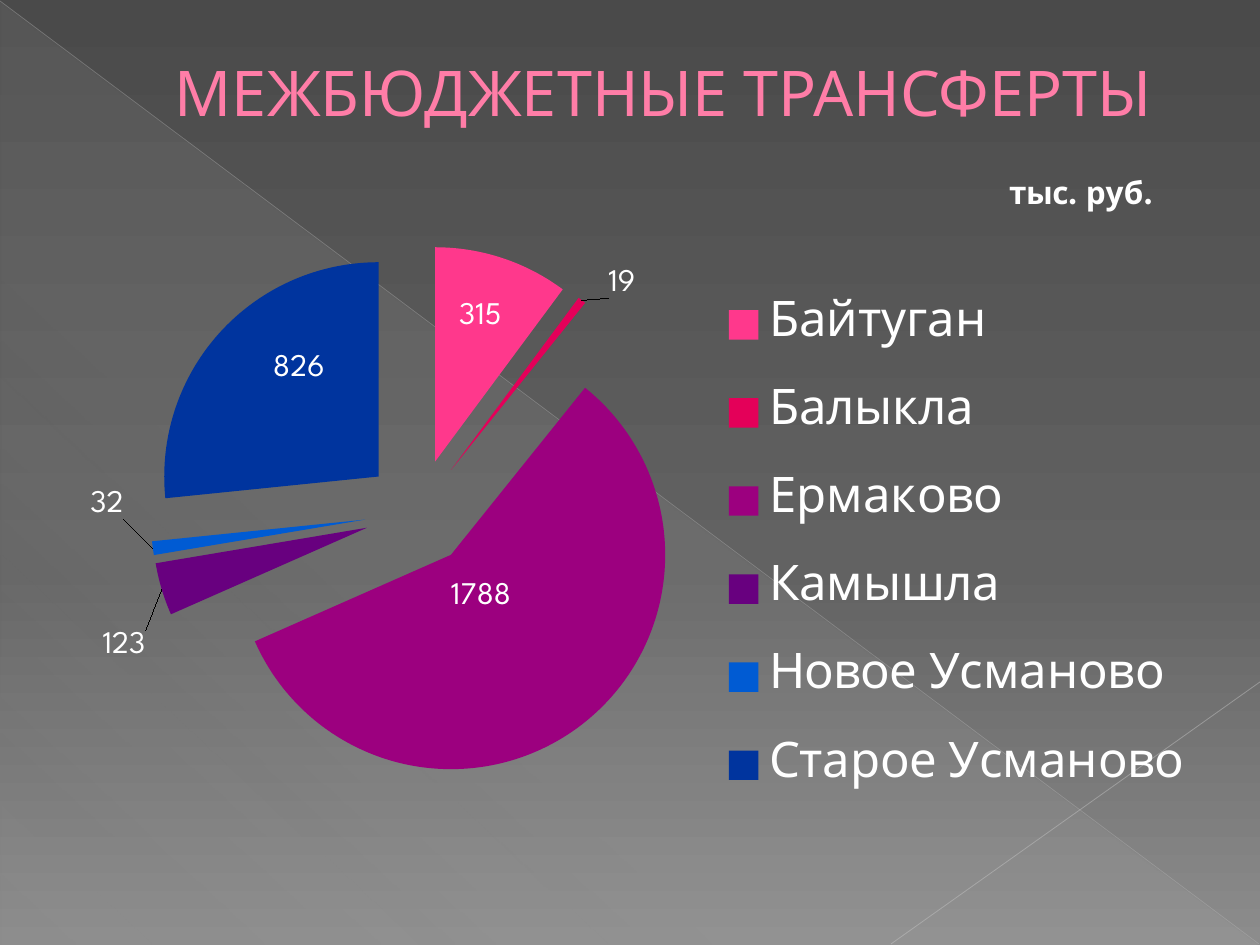
from lxml import etree
from pptx import Presentation
from pptx.chart.data import CategoryChartData
from pptx.dml.color import RGBColor
from pptx.enum.chart import XL_CHART_TYPE, XL_LABEL_POSITION, XL_LEGEND_POSITION
from pptx.enum.shapes import MSO_CONNECTOR, MSO_SHAPE
from pptx.enum.text import MSO_ANCHOR, PP_ALIGN
from pptx.oxml.ns import qn
from pptx.util import Emu, Pt

PIE = XL_CHART_TYPE.PIE
CENTER_LABEL = XL_LABEL_POSITION.CENTER
RIGHT = XL_LEGEND_POSITION.RIGHT
STRAIGHT = MSO_CONNECTOR.STRAIGHT
TRIANGLE = MSO_SHAPE.RIGHT_TRIANGLE
MIDDLE = MSO_ANCHOR.MIDDLE
CENTER = PP_ALIGN.CENTER

FONT = "League Spartan"
TITLE = "МЕЖБЮДЖЕТНЫЕ ТРАНСФЕРТЫ"
UNIT = "тыс. руб."
COLORS = {"title": "FF7DA7", "outline": "B12761", "text": "FFFFFF", "leader": "000000"}
BACKGROUND = [(0, "4A4A4A", 100), (60, "626262", 100), (100, "8C8C8C", 100)]
SHEEN = [(0, "D2D2D2", 10), (70, "D2D2D2", 8), (100, "D2D2D2", 1)]
RULES = [
    ((0, 1, 1259, 944), "BFBFBF", 0.39, 35),
    ((1260, 682, 891, 944), "C6C6C6", 0.47, 45),
]
TRANSFERS = [
    ("Байтуган", 315, "FF388C", (0.01, -0.06)),
    ("Балыкла", 19, "E40059", (0.09, -0.14)),
    ("Ермаково", 1788, "9C007F", (-0.03, -0.06)),
    ("Камышла", 123, "68007F", (-0.12, 0.12)),
    ("Новое Усманово", 32, "005BD3", (-0.13, -0.04)),
    ("Старое Усманово", 826, "00349E", (0, -0.05)),
]
SCALE = 914400 // 126


def px(*lengths):
    return [Emu(length * SCALE) for length in lengths]


def rgb(value):
    return RGBColor.from_string(value)


def add(parent, tag, **attributes):
    child = etree.SubElement(parent, qn(tag))
    for name, value in attributes.items():
        child.set(name, str(value))
    return child


def add_color(parent, color, opacity=100):
    node = add(parent, "a:srgbClr", val=color)
    if opacity < 100:
        add(node, "a:alpha", val=opacity * 1000)


def set_gradient(fill, owner, stops, angle):
    fill.gradient()
    fill.gradient_angle = 360 - angle
    stop_list = next(owner.iter(qn("a:gsLst")))
    for old in list(stop_list):
        stop_list.remove(old)
    for position, color, opacity in stops:
        add_color(add(stop_list, "a:gs", pos=position * 1000), color, opacity)


def set_font(font, size, color="text", bold=False):
    font.name, font.size, font.bold = FONT, Pt(size), bold
    font.color.rgb = rgb(COLORS[color])


def make_layout(inner=False, **place):
    layout = etree.Element(qn("c:layout"))
    manual = add(layout, "c:manualLayout")
    if inner:
        add(manual, "c:layoutTarget", val="inner")
    if "w" in place or inner:
        add(manual, "c:xMode", val="edge")
        add(manual, "c:yMode", val="edge")
    for name, value in place.items():
        add(manual, f"c:{name}", val=value)
    return layout


def place_part(part, after, layout):
    for old in part.findall(qn("c:layout")):
        part.remove(old)
    anchor = part.find(qn(after)) if after else None
    if anchor is None:
        part.insert(0, layout)
    else:
        anchor.addnext(layout)


def add_backdrop(page):
    background = page.background
    set_gradient(background.fill, page.element, BACKGROUND, 90)
    triangle = page.shapes.add_shape(TRIANGLE, *px(1, 2, 1258, 943))
    triangle.shadow.inherit = False
    triangle.line.fill.background()
    set_gradient(triangle.fill, triangle.element, SHEEN, 133)
    for ends, color, width, opacity in RULES:
        rule = page.shapes.add_connector(STRAIGHT, *px(*ends))
        rule.line.width = Pt(width)
        rule.line.color.rgb = rgb(color)
        add(next(rule.element.iter(qn("a:srgbClr"))), "a:alpha", val=opacity * 1000)
        add(rule.element.spPr, "a:effectLst")


def add_title(page):
    title = page.shapes.title
    title.left, title.top, title.width, title.height = px(63, 37, 1134, 108)
    frame = title.text_frame
    frame.text = TITLE
    frame.vertical_anchor = MIDDLE
    para = frame.paragraphs[0]
    para.alignment = CENTER
    properties = para._p.get_or_add_pPr()
    properties.set("marL", str(67 * SCALE))
    properties.set("indent", "0")
    span = para.runs[0]
    set_font(span.font, 36, "title")
    outline = etree.Element(qn("a:ln"), w=str(Pt(0.5)))
    add_color(add(outline, "a:solidFill"), COLORS["outline"])
    span._r.get_or_add_rPr().insert(0, outline)


def add_transfers(page):
    data = CategoryChartData()
    data.categories = [name for name, *_ in TRANSFERS]
    data.add_series("Series 1", [value for _, value, *_ in TRANSFERS])
    chart = page.shapes.add_chart(PIE, *px(44, 165, 1170, 724), data).chart
    set_font(chart.font, 18)

    chart.has_title = True
    heading = chart.chart_title
    heading.include_in_layout = False
    heading.text_frame.text = UNIT
    set_font(heading.text_frame.paragraphs[0].font, 18, bold=True)
    title_layout = make_layout(x=0.82, y=0.01)
    manual = title_layout[0]
    for index, name in enumerate(("c:xMode", "c:yMode")):
        manual.insert(index, etree.Element(qn(name), val="edge"))
    place_part(heading._element, "c:tx", title_layout)

    chart.has_legend = True
    legend = chart.legend
    legend.position = RIGHT
    legend.include_in_layout = False
    set_font(legend.font, 28)
    place_part(legend._element, "c:legendPos", make_layout(x=0.57, y=0.13, w=0.42, h=0.79))

    plot = chart.plots[0]
    plot.vary_by_categories = True
    plot_area = next(chart._chartSpace.iter(qn("c:plotArea")))
    place_part(plot_area, None, make_layout(inner=True, x=0, y=0.11, w=0.64, h=0.74))

    series = plot.series[0]
    labels = series.data_labels
    labels.show_value = True
    labels.position = CENTER_LABEL
    set_font(labels.font, 18)
    for index, (_, _, color, offset) in enumerate(TRANSFERS):
        point = series.points[index]
        point.format.fill.solid()
        point.format.fill.fore_color.rgb = rgb(color)
        point.data_label.position = CENTER_LABEL
        set_font(point.data_label.font, 18)
        label = series._element.findall(f"{qn('c:dLbls')}/{qn('c:dLbl')}")[index]
        place_part(label, "c:idx", make_layout(x=offset[0], y=offset[1]))

    label_group = series._element.find(qn("c:dLbls"))
    for old in label_group.findall(qn("c:showLeaderLines")):
        label_group.remove(old)
    add(label_group, "c:showLeaderLines", val=1)
    leader = add(add(label_group, "c:leaderLines"), "c:spPr")
    add_color(add(add(leader, "a:ln"), "a:solidFill"), COLORS["leader"])
    explosion = etree.Element(qn("c:explosion"), val="25")
    series._element.find(qn("c:dPt")).addprevious(explosion)


def main():
    deck = Presentation()
    deck.slide_width, deck.slide_height = px(1260, 945)
    page = deck.slides.add_slide(deck.slide_layouts[5])
    add_backdrop(page)
    add_title(page)
    add_transfers(page)
    deck.save("out.pptx")


if __name__ == "__main__":
    main()
